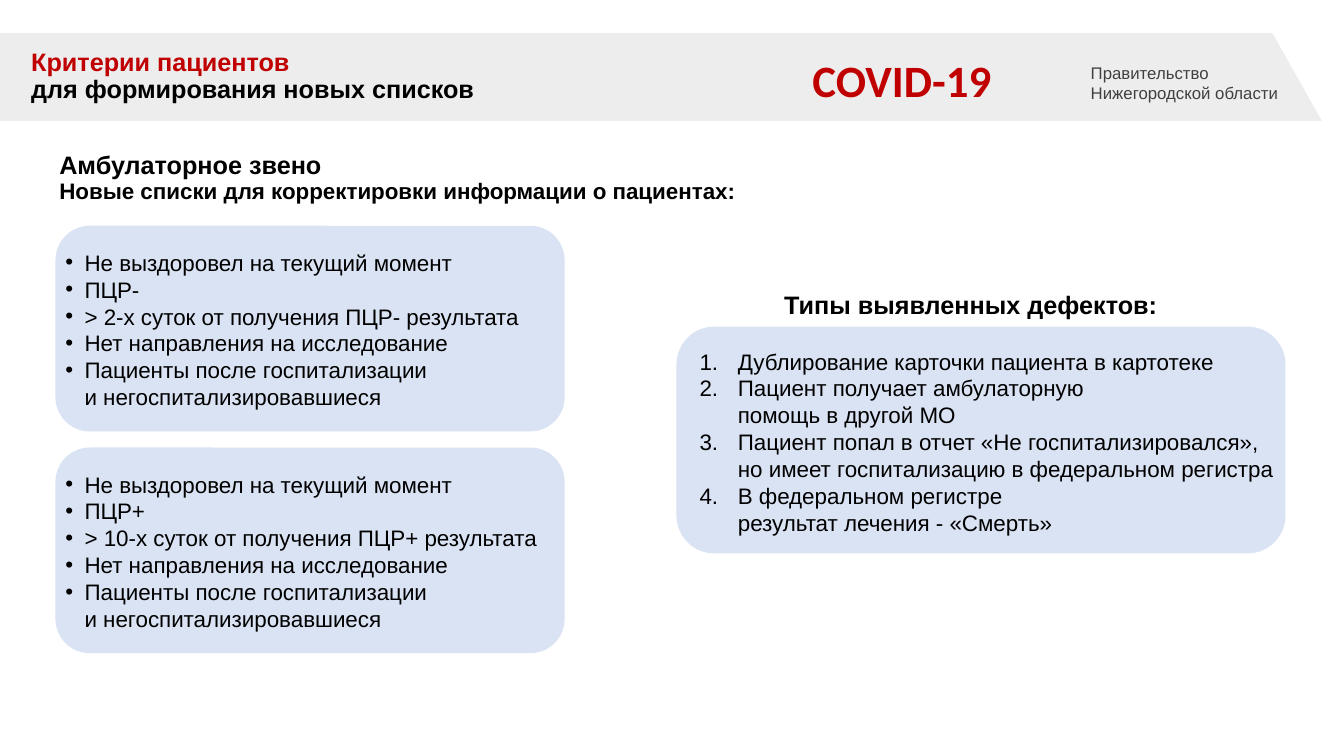
from lxml import etree
from pptx import Presentation
from pptx.dml.color import RGBColor
from pptx.enum.shapes import MSO_SHAPE
from pptx.enum.text import MSO_ANCHOR, MSO_AUTO_SIZE, PP_ALIGN
from pptx.oxml.ns import qn
from pptx.util import Inches, Pt

ROUNDED = MSO_SHAPE.ROUNDED_RECTANGLE
TOP = MSO_ANCHOR.TOP
LEFT = PP_ALIGN.LEFT
NO_AUTOFIT = MSO_AUTO_SIZE.NONE

BLACK = RGBColor(0x00, 0x00, 0x00)
RED = RGBColor(0xC0, 0x00, 0x00)
GRAY = RGBColor(0x40, 0x40, 0x40)
BAND = RGBColor(0xD9, 0xD9, 0xD9)
PANEL = RGBColor(0xDA, 0xE3, 0xF3)


class SlideBuilder:
    """Holds the text style and the slide being filled."""

    font = "Arial"

    def __init__(self, slide):
        self.slide = slide

    def fill(self, sp, color):
        sp.shadow.inherit = False
        sp.fill.solid()
        sp.fill.fore_color.rgb = color
        sp.line.fill.background()

    def band(self, points, color, alpha):
        pts = [(Inches(x), Inches(y)) for x, y in points]
        builder = self.slide.shapes.build_freeform(*pts[0], scale=1.0)
        builder.add_line_segments(pts[1:], close=True)
        sp = builder.convert_to_shape()
        self.fill(sp, color)
        clr = sp._element.spPr.find(".//" + qn("a:srgbClr"))
        etree.SubElement(clr, qn("a:alpha"), val=str(alpha * 1000))
        # Send behind the title
        self.slide.shapes._spTree.insert(2, sp._element)

    def panel(self, x, y, w, h):
        sp = self.slide.shapes.add_shape(
            ROUNDED, Inches(x), Inches(y), Inches(w), Inches(h))
        self.fill(sp, PANEL)

    def add_lines(self, p, lines, size, bold=False, font=None):
        """Add (text, color, size) lines to one paragraph, with line breaks between."""
        p.alignment = LEFT
        for i, (text, color, line_size) in enumerate(lines):
            if i:
                p.add_line_break()
            r = p.add_run()
            r.text = text
            r.font.name = font or self.font
            r.font.size = Pt(line_size or size)
            r.font.bold = bold
            r.font.color.rgb = color

    def frame(self, sp, x, y, w, h, wrap=True):
        sp.left, sp.top, sp.width, sp.height = map(Inches, (x, y, w, h))
        tf = sp.text_frame
        tf.word_wrap = wrap
        tf.auto_size = NO_AUTOFIT
        tf.vertical_anchor = TOP
        return tf

    def new_box(self):
        return self.slide.shapes.add_textbox(0, 0, 0, 0)

    def title(self, box, lines, size):
        p = self.frame(self.slide.shapes.title, *box).paragraphs[0]
        p.line_spacing = 0.9
        self.add_lines(p, lines, size, bold=True)

    def text(self, box, lines, size, bold=False, font=None, spacing=None, wrap=True):
        p = self.frame(self.new_box(), *box, wrap=wrap).paragraphs[0]
        p.line_spacing = spacing
        self.add_lines(p, lines, size, bold, font)

    def item_list(self, box, items, indent, numbered=False):
        tf = self.frame(self.new_box(), *box)
        for i, item in enumerate(items):
            p = tf.paragraphs[0] if i == 0 else tf.add_paragraph()
            pPr = p._p.get_or_add_pPr()
            pPr.set("marL", str(Inches(indent)))
            pPr.set("indent", str(-Inches(indent)))
            if numbered:
                etree.SubElement(pPr, qn("a:buFont"), typeface="+mj-lt")
                etree.SubElement(pPr, qn("a:buAutoNum"), type="arabicPeriod")
            else:
                etree.SubElement(pPr, qn("a:buFont"), typeface="Arial")
                etree.SubElement(pPr, qn("a:buChar"), char="•")
            self.add_lines(p, [(line, BLACK, None) for line in item.split("\n")], 16)


def main():
    prs = Presentation()
    prs.slide_width, prs.slide_height = Inches(13.33), Inches(7.5)
    s = SlideBuilder(prs.slides.add_slide(prs.slide_layouts[5]))

    # Header
    s.band([(13.11, 1.2), (12.62, 0.33), (-0.01, 0.33), (0, 1.2)], BAND, 45)
    s.title((0.21, 0.44, 6.95, 0.65),
            [("Критерии пациентов", RED, None),
             ("для формирования новых списков", BLACK, None)], 18)
    s.text((7.96, 0.47, 1.99, 0.64), [("COVID-19", RED, None)], 32,
           bold=True, font="Calibri", wrap=False)
    s.text((10.72, 0.57, 2.13, 0.49),
           [("Правительство Нижегородской области", GRAY, None)], 12)

    # Section heading
    s.text((0.49, 1.47, 7.06, 0.62),
           [("Амбулаторное звено", BLACK, None),
            ("Новые списки для корректировки информации о пациентах:", BLACK, 16)],
           18, bold=True, spacing=0.9, wrap=False)

    # Patient criteria by PCR result
    for i, (sign, days) in enumerate([("-", 2), ("+", 10)]):
        top = 2.24 + 2.2 * i
        s.panel(0.55, top, 5.05, 2.04)
        s.item_list((0.55, top + 0.18, 5.05, 1.72), [
            "Не выздоровел на текущий момент",
            f"ПЦР{sign}",
            f"> {days}-х суток от получения ПЦР{sign} результата",
            "Нет направления на исследование",
            "Пациенты после госпитализации\nи негоспитализировавшиеся",
        ], 0.19)

    # Defect types
    s.text((7.68, 2.86, 4.1, 0.37), [("Типы выявленных дефектов:", BLACK, None)],
           18, bold=True, spacing=0.9)
    s.panel(6.71, 3.24, 6.04, 2.25)
    s.item_list((6.84, 3.4, 6.04, 2.26), [
        "Дублирование карточки пациента в картотеке",
        "Пациент получает амбулаторную\nпомощь в другой МО",
        "Пациент попал в отчет «Не госпитализировался»,\n"
        "но имеет госпитализацию в федеральном регистра",
        "В федеральном регистре\nрезультат лечения - «Смерть»",
    ], 0.38, numbered=True)

    prs.save("out.pptx")


if __name__ == "__main__":
    main()
